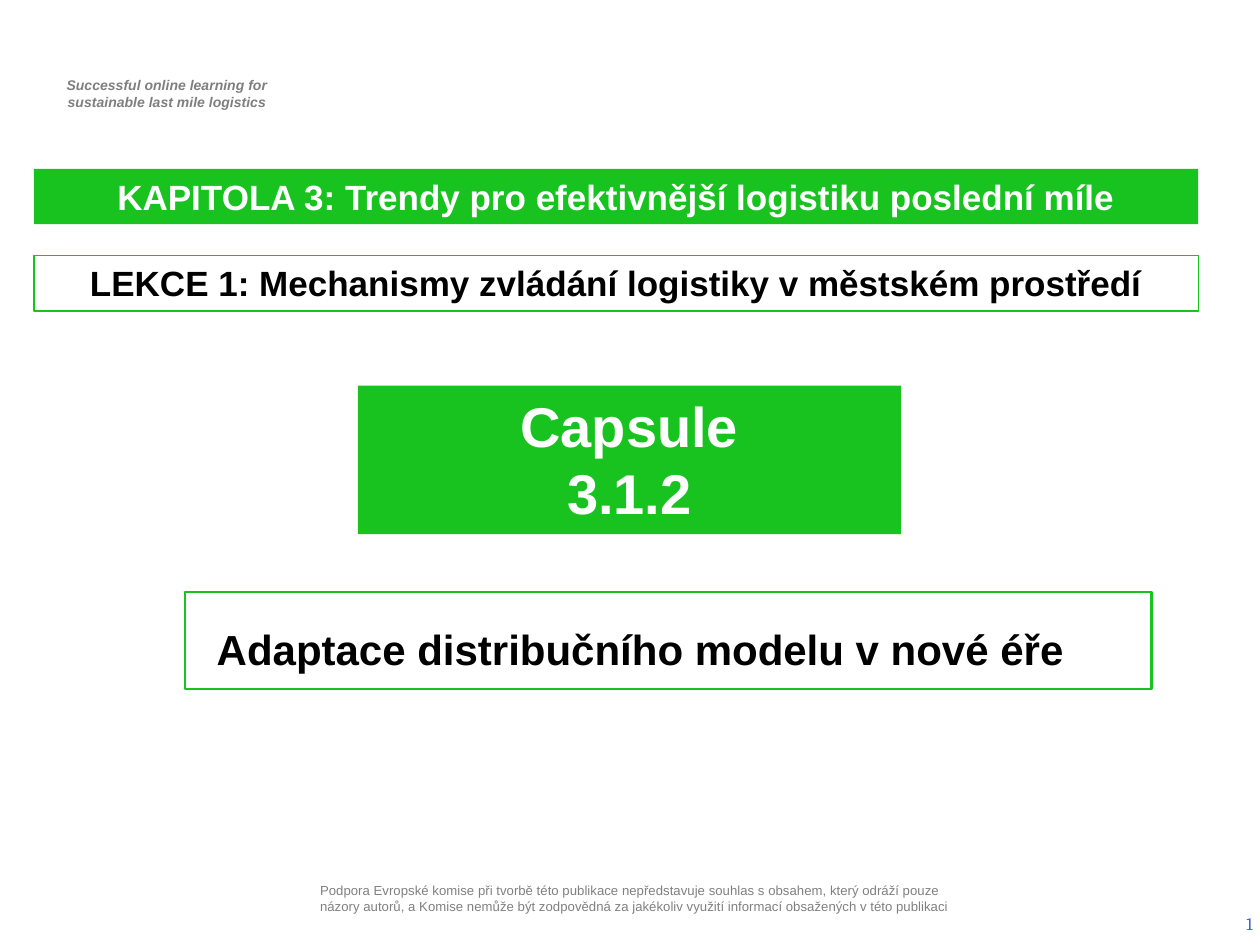
import pptx
import pptx.dml.color
import pptx.enum.shapes
import pptx.enum.text
import pptx.util

Inches = pptx.util.Inches
RGBColor = pptx.dml.color.RGBColor
ALIGN = pptx.enum.text.PP_ALIGN
ANCHOR = pptx.enum.text.MSO_ANCHOR

GREEN = RGBColor(0x18, 0xC3, 0x20)
WHITE = RGBColor(0xFF, 0xFF, 0xFF)
BLACK = RGBColor(0, 0, 0)
TAGLINE_GRAY = RGBColor(0x7F, 0x7F, 0x7F)
NOTICE_GRAY = RGBColor(0x80, 0x80, 0x80)
NUMBER_BLUE = RGBColor(0x33, 0x66, 0xCC)


def write_text(s, lines, size, color, align=ALIGN.CENTER, anchor=ANCHOR.TOP,
               insets=(0.1, 0.05, 0.1, 0.05), font="Arial", **styles):
    """Fill a shape with one paragraph per line; insets are left, top, right, bottom."""
    tf = s.text_frame
    tf.word_wrap = True
    tf.vertical_anchor = anchor
    for side, inset in zip(("left", "top", "right", "bottom"), insets):
        setattr(tf, f"margin_{side}", Inches(inset))
    formats = {"name": font, "size": pptx.util.Pt(size), **styles}
    for i, line in enumerate(lines):
        p = tf.add_paragraph() if i else tf.paragraphs[0]
        p.alignment = align
        r = p.add_run()
        r.text = line
        r.font.color.rgb = color
        for name, value in formats.items():
            setattr(r.font, name, value)


def add_text(slide, box, lines, size, color, **layout):
    s = slide.shapes.add_textbox(*map(Inches, box))
    write_text(s, lines, size, color, **layout)


def add_banner(slide, box, lines, size, outline=None, **layout):
    """Add a green box with white text, or an outlined one with black text."""
    s = slide.shapes.add_shape(
        pptx.enum.shapes.MSO_SHAPE.RECTANGLE, *map(Inches, box))
    s.shadow.inherit = False
    if outline:
        s.fill.background()
        s.line.color.rgb = GREEN
        s.line.width = pptx.util.Pt(outline)
    else:
        s.fill.solid()
        s.fill.fore_color.rgb = GREEN
        s.line.fill.background()
    write_text(s, lines, size, BLACK if outline else WHITE, bold=True, **layout)


def main():
    prs = pptx.Presentation()
    prs.slide_width, prs.slide_height = Inches(10), Inches(7.5)
    slide = prs.slides.add_slide(prs.slide_layouts[6])

    add_text(slide, (0.29, 0.56, 2.03, 0.37),
             ["Successful online learning for", "sustainable last mile logistics"],
             8, TAGLINE_GRAY, insets=(0.14, 0.05, 0.1, 0.05), bold=True, italic=True)
    add_text(slide, (2.5, 6.88, 5.1, 0.5),
             ["Podpora Evropské komise při tvorbě této publikace nepředstavuje "
              "souhlas s obsahem, který odráží pouze názory autorů, a Komise "
              "nemůže být zodpovědná za jakékoliv využití informací obsažených "
              "v této publikaci"],
             7.5, NOTICE_GRAY, align=ALIGN.LEFT, anchor=ANCHOR.MIDDLE,
             insets=(0.04,) * 4)
    add_text(slide, (7.71, 7.13, 2.33, 0.4), ["1"], 10, NUMBER_BLUE,
             align=ALIGN.RIGHT, anchor=ANCHOR.MIDDLE, font="Cambria")

    add_banner(slide, (2.84, 3.06, 4.31, 1.18), ["Capsule", "3.1.2"], 32)
    add_banner(slide, (1.47, 4.7, 7.67, 0.77),
               ["Adaptace distribučního modelu v nové éře"], 24, outline=1.5,
               align=ALIGN.LEFT, insets=(0.25, 0.25, 0.1, 0.05))
    add_banner(slide, (0.27, 1.34, 9.24, 0.44),
               ["KAPITOLA 3: Trendy pro efektivnější logistiku poslední míle"], 20)
    add_banner(slide, (0.27, 2.03, 9.24, 0.44),
               ["LEKCE 1: Mechanismy zvládání logistiky v městském prostředí"], 20,
               outline=0.75)

    prs.save("out.pptx")


if __name__ == "__main__":
    main()
